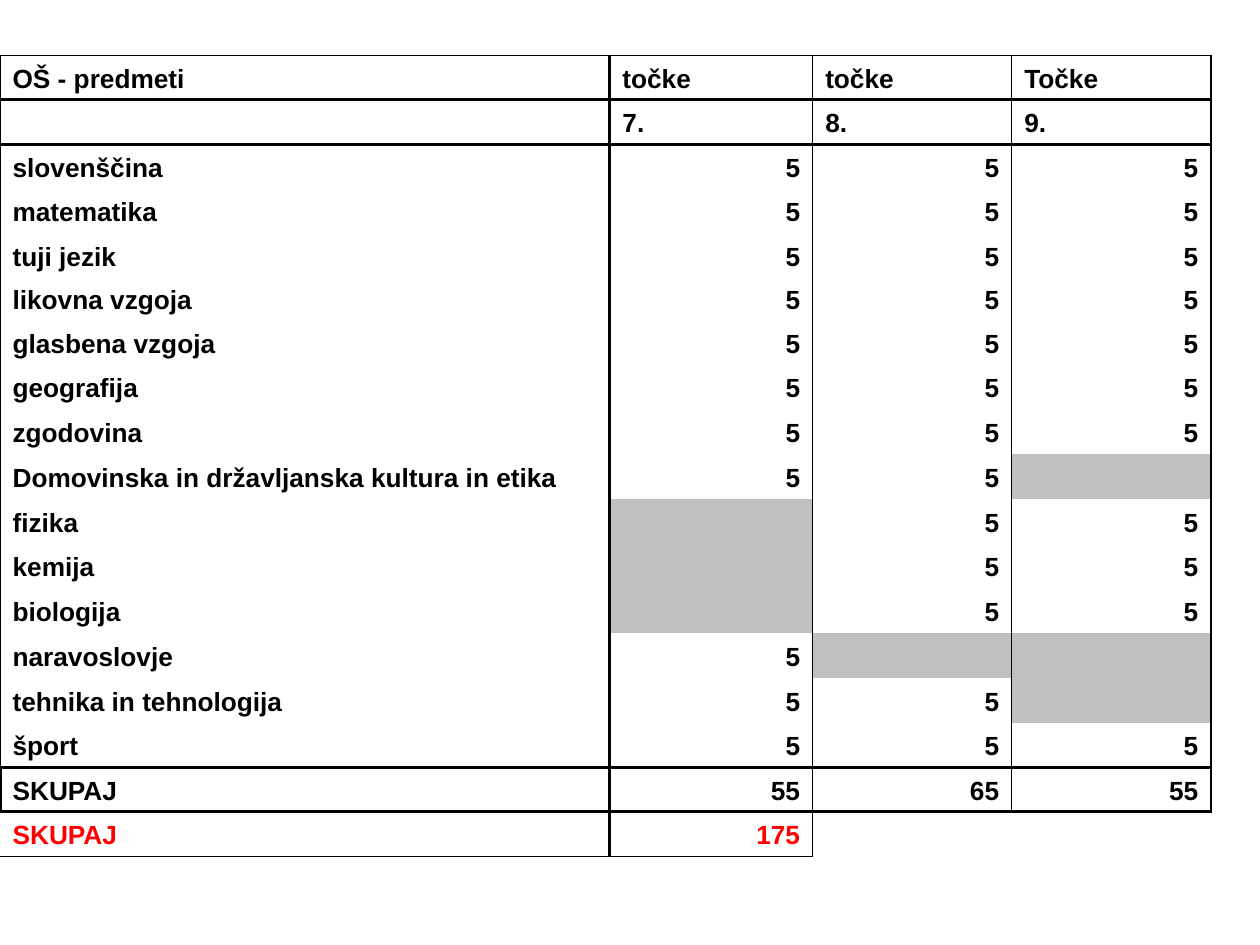
from lxml.etree import SubElement
from pptx import Presentation
from pptx.dml.color import RGBColor
from pptx.enum.text import MSO_ANCHOR, PP_ALIGN
from pptx.oxml.ns import qn
from pptx.util import Inches, Pt

BLACK, RED, GRAY, WHITE = "000000", "FF0000", "C0C0C0", "FFFFFF"
FONT_SIZE = Pt(15)
COLUMN_WIDTHS = [4.84, 1.61, 1.58, 1.58]
ROW_HEIGHT = Inches(6) // 17
SHORT_ROW, SHORT_ROW_HEIGHT = 5, Inches(0.34)

# Points in grades 7, 8 and 9; None marks a grade without the subject.
SUBJECTS = [
    ("slovenščina", 5, 5, 5),
    ("matematika", 5, 5, 5),
    ("tuji jezik", 5, 5, 5),
    ("likovna vzgoja", 5, 5, 5),
    ("glasbena vzgoja", 5, 5, 5),
    ("geografija", 5, 5, 5),
    ("zgodovina", 5, 5, 5),
    ("Domovinska in državljanska kultura in etika", 5, 5, None),
    ("fizika", None, 5, 5),
    ("kemija", None, 5, 5),
    ("biologija", None, 5, 5),
    ("naravoslovje", 5, None, None),
    ("tehnika in tehnologija", 5, 5, None),
    ("šport", 5, 5, 5),
]


def color(value):
    return RGBColor.from_string(value)


def score_rows():
    """Return headings, subjects and computed totals."""
    totals = [sum(row[grade] or 0 for row in SUBJECTS) for grade in (1, 2, 3)]
    return [
        ("OŠ - predmeti", "točke", "točke", "Točke"),
        ("", "7.", "8.", "9."),
        *SUBJECTS,
        ("SKUPAJ", *totals),
        ("SKUPAJ", sum(totals), "", ""),
    ]


def vertical_width(row, edge, last_row):
    """Return the line width in points at a column edge, counted from the left."""
    if row == last_row:
        return {1: 2, 2: 1}.get(edge, 0)
    if edge == 1 or (edge == 0 and row == last_row - 1):
        return 2
    return 1


def horizontal_width(edge, column, last_row):
    """Return the line width in points at a row edge, counted from the top."""
    if edge in (1, 2, last_row - 1, last_row):
        return 2
    return 1 if edge == 0 or (edge > last_row and column < 2) else 0


def set_borders(cell, widths):
    properties = cell._tc.get_or_add_tcPr()
    for side, width in zip("LRTB", widths):
        line = SubElement(properties, qn(f"a:ln{side}"), w=str(Pt(width)))
        if width:
            fill = SubElement(line, qn("a:solidFill"))
            SubElement(fill, qn("a:srgbClr"), val=BLACK)
        else:
            SubElement(line, qn("a:noFill"))


def set_fill(cell, fill):
    cell.fill.solid()
    cell.fill.fore_color.rgb = color(fill)


def write_cell(cell, value, text_color):
    cell.vertical_anchor = MSO_ANCHOR.BOTTOM
    paragraph = cell.text_frame.paragraphs[0]
    if value in ("", None):
        # The size of an empty paragraph keeps its row from growing.
        SubElement(paragraph._p, qn("a:endParaRPr"), sz=str(int(FONT_SIZE.pt * 100)))
        return
    paragraph.text = str(value)
    paragraph.alignment = PP_ALIGN.RIGHT if isinstance(value, int) else PP_ALIGN.LEFT
    indent = Inches(0.38)
    properties = paragraph._p.get_or_add_pPr()
    properties.set("marL", str(indent))
    properties.set("indent", str(-indent))
    font = paragraph.runs[0].font
    font.name, font.size, font.bold = "Arial", FONT_SIZE, True
    font.color.rgb = color(text_color)


def add_score_table(page, rows):
    height = ROW_HEIGHT * (len(rows) - 1) + SHORT_ROW_HEIGHT
    table = page.shapes.add_table(
        len(rows), len(COLUMN_WIDTHS), Inches(0), Inches(0.44),
        Inches(sum(COLUMN_WIDTHS)), height).table
    table.first_row = table.horz_banding = False
    for column, width in zip(table.columns, COLUMN_WIDTHS):
        column.width = Inches(width)

    last_row = len(rows) - 1
    for r, values in enumerate(rows):
        table.rows[r].height = SHORT_ROW_HEIGHT if r == SHORT_ROW else ROW_HEIGHT
        for c, value in enumerate(values):
            cell = table.cell(r, c)
            set_borders(cell, [
                vertical_width(r, c, last_row),
                vertical_width(r, c + 1, last_row),
                horizontal_width(r, c, last_row),
                horizontal_width(r + 1, c, last_row),
            ])
            set_fill(cell, GRAY if value is None else WHITE)
            write_cell(cell, value, RED if r == last_row else BLACK)


def main():
    deck = Presentation()
    deck.slide_width, deck.slide_height = Inches(10), Inches(7.5)
    page = deck.slides.add_slide(deck.slide_layouts[6])
    add_score_table(page, score_rows())
    deck.save("out.pptx")


if __name__ == "__main__":
    main()
